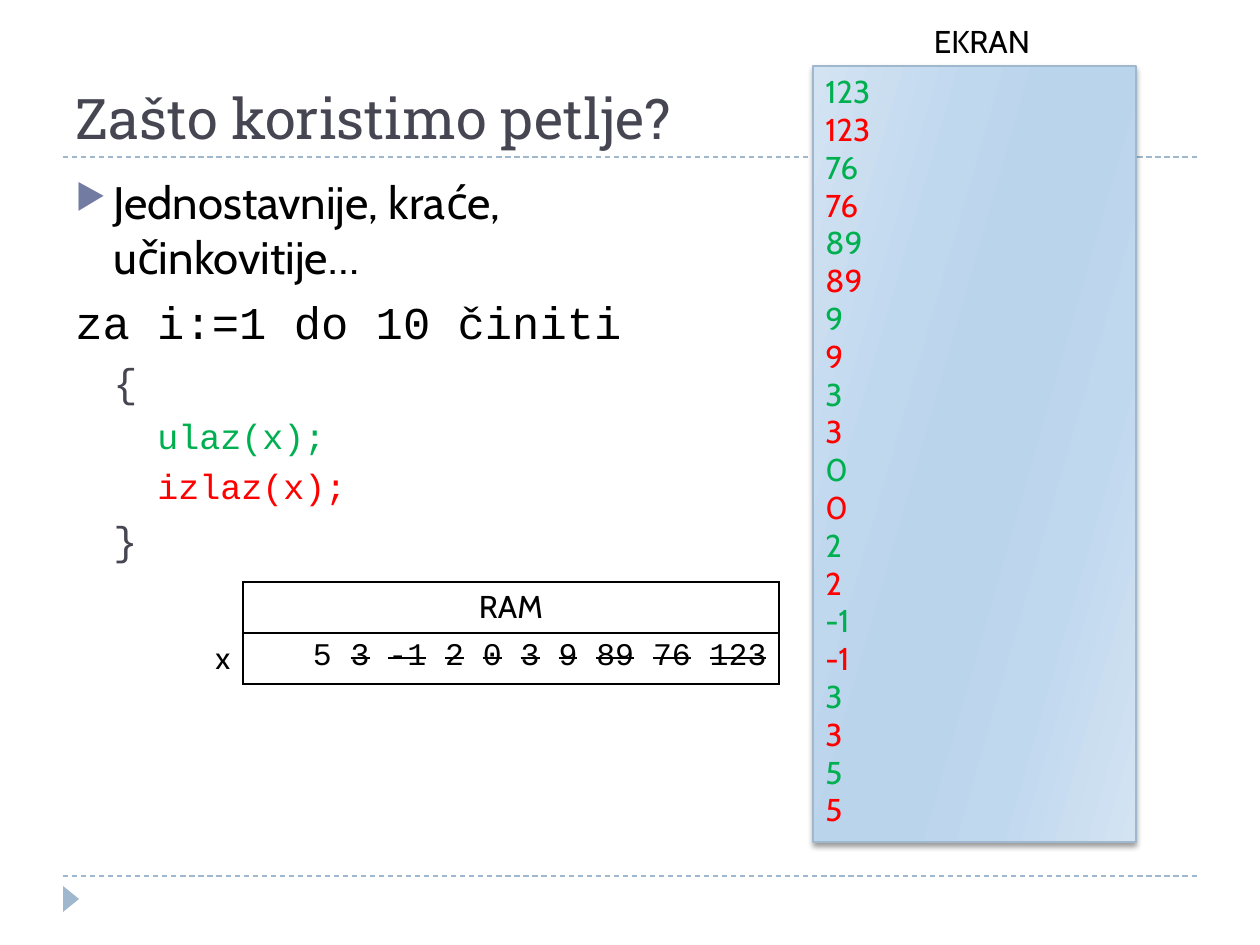
from lxml.etree import SubElement
from pptx import Presentation
from pptx.dml.color import RGBColor
from pptx.enum.dml import MSO_LINE_DASH_STYLE as Dash
from pptx.enum.shapes import MSO_CONNECTOR as Connector, MSO_SHAPE as Shape
from pptx.enum.text import MSO_ANCHOR as Anchor, MSO_AUTO_SIZE as AutoSize, PP_ALIGN as Align
from pptx.oxml import parse_xml
from pptx.oxml.ns import nsdecls, qn
from pptx.util import Pt

BLACK, WHITE, SLATE = "000000", "FFFFFF", "464653"
GREEN, RED, STEEL, VIOLET = "00B050", "FF0000", "9FB8CD", "727CA3"
BODY, CODE, HEADING = "Cabin", "Courier New", "Roboto Slab"


def px(*lengths):
    return [round(length * 914400 / 126) for length in lengths]


def rgb(color):
    return RGBColor.from_string(color)


class SlideBuilder:
    """Holds the text style and the current slide, and draws each kind of element."""

    def __init__(self, slide, font=BODY, size=18):
        self.slide, self.font, self.size = slide, font, size

    def put_text(self, paragraph, text, color=BLACK, size=None, font=None, align=Align.LEFT):
        paragraph.text = text
        paragraph.alignment = align
        style = paragraph.font
        style.name, style.size = font or self.font, Pt(size or self.size)
        style.bold, style.color.rgb = False, rgb(color)

    def paragraphs(self, frame, count):
        return [frame.paragraphs[0]] + [frame.add_paragraph() for _ in range(count - 1)]

    def title(self, box, text):
        heading = self.slide.shapes.title
        heading.left, heading.top, heading.width, heading.height = px(*box)
        frame = heading.text_frame
        frame.auto_size, frame.vertical_anchor = AutoSize.NONE, Anchor.BOTTOM
        self.put_text(frame.paragraphs[0], text, SLATE, 32, HEADING)

    def text_box(self, box):
        frame = self.slide.shapes.add_textbox(*px(*box)).text_frame
        frame.word_wrap = True
        return frame

    def label(self, box, text):
        self.put_text(self.text_box(box).paragraphs[0], text, align=Align.CENTER)

    def body(self, box, lines):
        frame = self.text_box(box)
        for paragraph, line in zip(self.paragraphs(frame, len(lines)), lines):
            text, color, size, font, level, margin, bullet = line
            paragraph.level = level
            paragraph.space_before = Pt(5 if level else 6)
            self.indent(paragraph, margin, bullet)
            self.put_text(paragraph, text, color, size, font)

    def indent(self, paragraph, margin, bullet):
        properties = paragraph._p.get_or_add_pPr()
        left = px(margin)[0]
        properties.set("marL", str(left))
        properties.set("indent", str(-left if bullet else 0))
        if bullet:
            tint = SubElement(properties, qn("a:buClr"))
            SubElement(tint, qn("a:srgbClr"), val=VIOLET)
            SubElement(properties, qn("a:buSzPct"), val="76000")
            SubElement(properties, qn("a:buChar"), char=bullet)
        else:
            SubElement(properties, qn("a:buNone"))

    def rule(self, left, right, y):
        line = self.slide.shapes.add_connector(Connector.STRAIGHT, *px(left, y, right, y))
        line.line.color.rgb, line.line.width = rgb(STEEL), Pt(0.75)
        line.line.dash_style = Dash.DASH
        SubElement(line._element.spPr, qn("a:effectLst"))

    def marker(self, box):
        triangle = self.slide.shapes.add_shape(Shape.ISOSCELES_TRIANGLE, *px(*box))
        triangle.rotation = 90
        triangle.shadow.inherit = False
        triangle.fill.solid()
        triangle.fill.fore_color.rgb = rgb(STEEL)
        triangle.line.fill.background()

    def screen(self, box, stops, angle, values):
        panel = self.slide.shapes.add_shape(Shape.RECTANGLE, *px(*box))
        panel.line.color.rgb, panel.line.width = rgb(STEEL), Pt(0.75)
        self.gradient(panel, stops, angle)
        self.drop_shadow(panel)
        frame = panel.text_frame
        frame.word_wrap, frame.vertical_anchor = True, Anchor.TOP
        echoes = [(value, color) for value in values for color in (GREEN, RED)]
        for paragraph, (value, color) in zip(self.paragraphs(frame, len(echoes)), echoes):
            self.put_text(paragraph, value, color)

    def gradient(self, panel, stops, angle):
        panel.fill.gradient()
        fill = panel._element.spPr.find(qn("a:gradFill"))
        stop_list = fill.find(qn("a:gsLst"))
        stop_list.clear()
        for position, color in stops:
            stop = SubElement(stop_list, qn("a:gs"), pos=str(position * 1000))
            SubElement(stop, qn("a:srgbClr"), val=color)
        fill.find(qn("a:lin")).set("ang", str(angle * 60000))

    def drop_shadow(self, panel):
        panel.shadow.inherit = False
        effects = panel._element.spPr.find(qn("a:effectLst"))
        effects.append(parse_xml(
            f'<a:outerShdw {nsdecls("a")} blurRad="{Pt(3)}" dist="{Pt(2)}" dir="5400000" '
            f'rotWithShape="0"><a:srgbClr val="{BLACK}"><a:alpha val="40000"/></a:srgbClr>'
            '</a:outerShdw>'))

    def memory(self, box, columns, variable, current, overwritten):
        table = self.slide.shapes.add_table(2, 2, *px(*box)).table
        table.first_row = table.horz_banding = False
        for column, width in zip(table.columns, px(*columns)):
            column.width = width
        for cell in table.iter_cells():
            cell.fill.solid()
            cell.fill.fore_color.rgb = rgb(WHITE)
        for row in range(2):
            self.border(table.cell(row, 0), "R")
            self.border(table.cell(row, 1), "LRTB")
        self.put_text(table.cell(0, 1).text_frame.paragraphs[0], "RAM", align=Align.CENTER)
        self.put_text(table.cell(1, 0).text_frame.paragraphs[0], variable, align=Align.RIGHT)
        history = table.cell(1, 1).text_frame.paragraphs[0]
        self.put_text(history, current, font=CODE, align=Align.RIGHT)
        for value in overwritten:
            history.add_run().text = " "
            struck = history.add_run()
            struck.text = value
            struck._r.get_or_add_rPr().set("strike", "sngStrike")

    def border(self, cell, sides):
        properties = cell._tc.get_or_add_tcPr()
        for position, side in enumerate(sides):
            properties.insert(position, parse_xml(
                f'<a:ln{side} {nsdecls("a")} w="{Pt(1)}"><a:solidFill>'
                f'<a:srgbClr val="{BLACK}"/></a:solidFill></a:ln{side}>'))


def main():
    deck = Presentation()
    deck.slide_width, deck.slide_height = px(1260, 945)
    builder = SlideBuilder(deck.slides.add_slide(deck.slide_layouts[5]))

    for y in (876, 157):
        builder.rule(63, 1197, y)
    builder.marker((58, 891, 26, 16))
    builder.title((63, 21, 1134, 136), "Zašto koristimo petlje?")
    builder.body((63, 168, 696, 354), [
        ("Jednostavnije, kraće, učinkovitije…", BLACK, 26, BODY, 0, 38, "▶"),
        ("za i:=1 do 10 činiti", BLACK, 26, CODE, 0, 0, None),
        ("{", SLATE, 23, CODE, 1, 38, None),
        ("ulaz(x);", GREEN, 20, CODE, 2, 82, None),
        ("izlaz(x);", RED, 20, CODE, 2, 82, None),
        ("}", SLATE, 23, CODE, 1, 38, None),
    ])

    inputs = ["123", "76", "89", "9", "3", "0", "2", "-1", "3", "5"]
    *overwritten, current = inputs
    builder.memory((164, 582, 615, 102), (79, 536), "x", current, overwritten[::-1])
    light, middle, deep = "D3E3F2", "C0D8EE", "BAD4EC"
    stops = [(0, light), (30, middle), (45, deep), (55, deep), (73, middle), (100, light)]
    builder.screen((813, 66, 323, 776), stops, 16, inputs)
    builder.label((868, 16, 228, 50), "EKRAN")

    deck.save("out.pptx")


if __name__ == "__main__":
    main()
